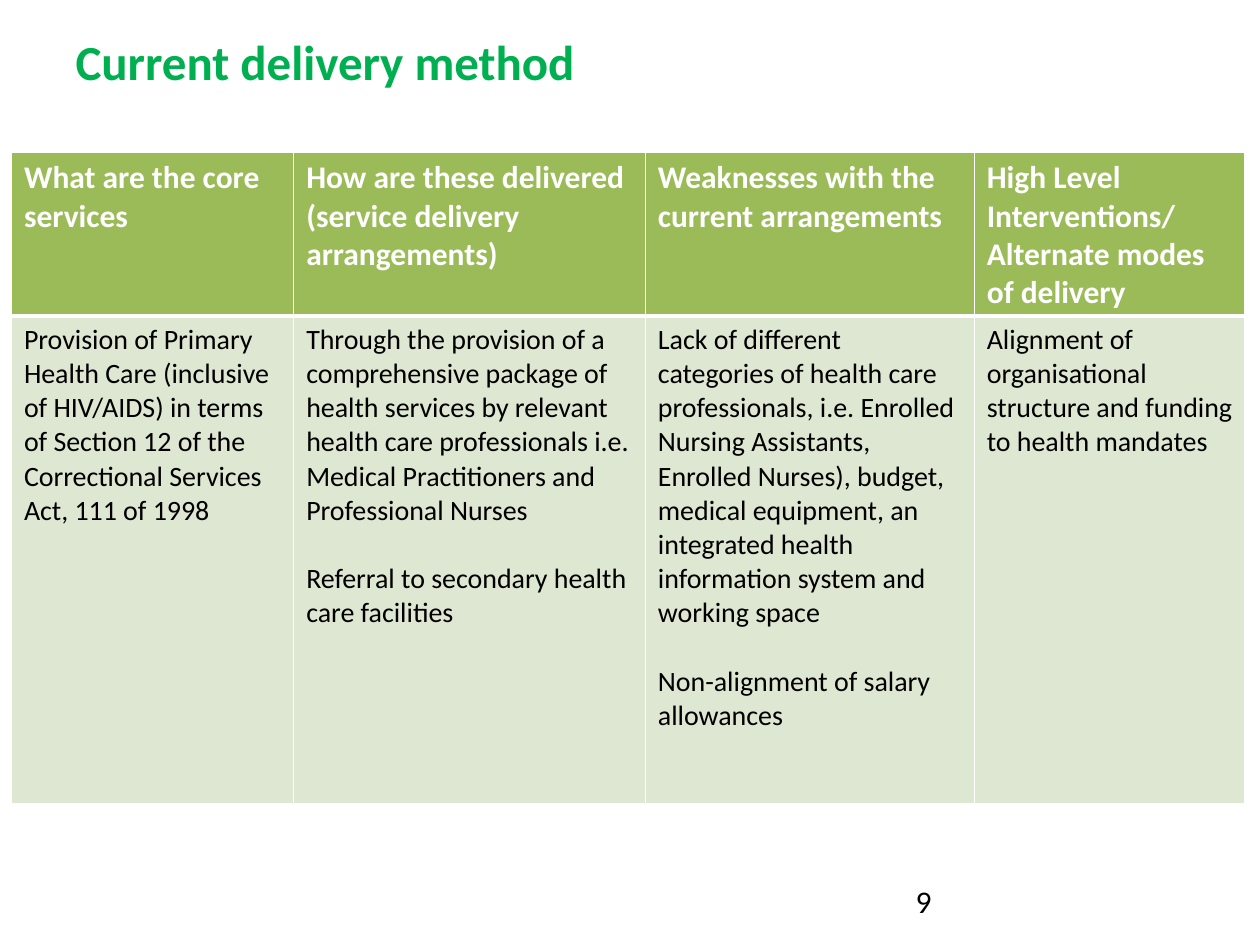
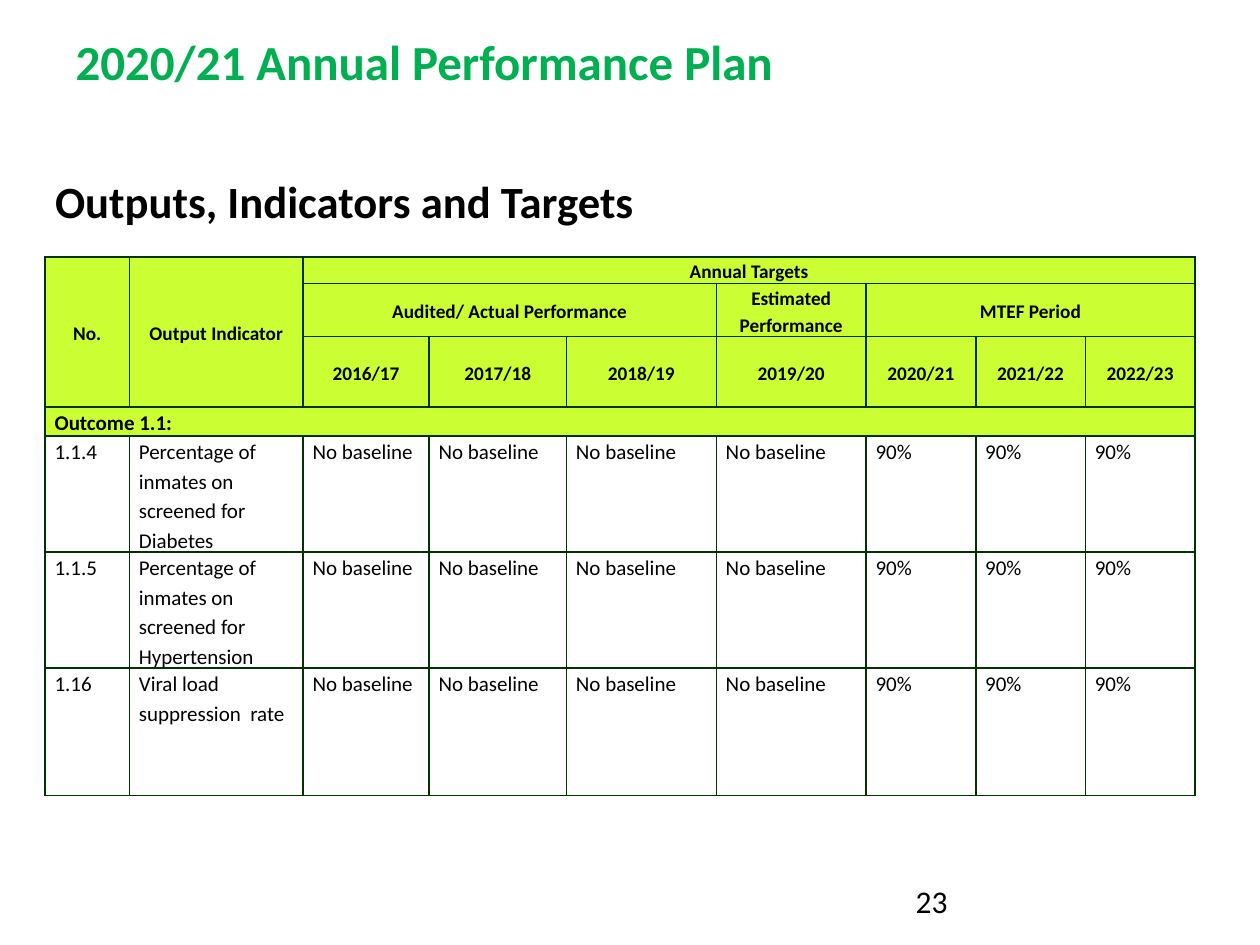
from pptx import Presentation
from pptx.dml.color import RGBColor
from pptx.enum.text import MSO_ANCHOR, MSO_AUTO_SIZE, PP_ALIGN
from pptx.util import Cm, Pt
from lxml.etree import fromstring

FONT = "Calibri"
TITLE_GREEN = RGBColor(0x00, 0xB0, 0x50)
BLACK = RGBColor(0x00, 0x00, 0x00)
WHITE = RGBColor(0xFF, 0xFF, 0xFF)
HEADER_GREEN = RGBColor(0x9B, 0xBB, 0x59)
BODY_GREEN = RGBColor(0xDE, 0xE7, 0xD1)
LIME = RGBColor(0xCC, 0xFF, 0x33)
DARK_GREEN = RGBColor(0x00, 0x33, 0x00)
DRAWING_NS = "http://schemas.openxmlformats.org/drawingml/2006/main"


def add_text(paragraph, text, size, color=BLACK, bold=False):
    run = paragraph.add_run()
    run.text = text
    run.font.name = FONT
    run.font.size = Pt(size)
    run.font.bold = bold
    run.font.color.rgb = color
    return run


def style_cell(cell, fill, line_color, top=1, bottom=1):
    if fill is None:
        cell.fill.background()
    else:
        cell.fill.solid()
        cell.fill.fore_color.rgb = fill
    properties = cell._tc.get_or_add_tcPr()
    for position, (side, width) in enumerate(zip("LRTB", (1, 1, top, bottom))):
        properties.insert(position, fromstring(
            f'<a:ln{side} xmlns:a="{DRAWING_NS}" w="{Pt(width)}">'
            f'<a:solidFill><a:srgbClr val="{line_color}"/></a:solidFill>'
            f'</a:ln{side}>'))


presentation = Presentation()
presentation.slide_width = Cm(25.4)
presentation.slide_height = Cm(19.05)

table_specs = [
    ("Current delivery method", "9", 0.23, 3.07,
     [5.69, 7.09, 6.63, 5.46], [3.15, 9.83]),
    ("2020/21 Annual Performance Plan", "23", 0.91, 5.18,
     [1.7, 3.5, 2.54, 2.77, 3.02, 3.02] + [2.21] * 3,
     [0.48, 0.99, 1.42, 0.53, 2.21, 2.21, 2.57]),
]
slides = []
tables = []
for title_text, page_number, left, top, widths, heights in table_specs:
    slide = presentation.slides.add_slide(presentation.slide_layouts[5])
    slides.append(slide)
    title = slide.shapes.title
    title.left, title.top, title.width, title.height = Cm(1.27), Cm(0.51), Cm(22.86), Cm(1.45)
    title.text_frame.vertical_anchor = MSO_ANCHOR.TOP
    title.text_frame.auto_size = MSO_AUTO_SIZE.SHAPE_TO_FIT_TEXT
    title.text_frame.paragraphs[0].alignment = PP_ALIGN.LEFT
    add_text(title.text_frame.paragraphs[0], title_text, 28, TITLE_GREEN, True)

    table = slide.shapes.add_table(
        len(heights), len(widths), Cm(left), Cm(top),
        Cm(sum(widths)), Cm(sum(heights))).table
    table.first_row = False
    table.horz_banding = False
    for column, width in zip(table.columns, widths):
        column.width = Cm(width)
    for row, height in zip(table.rows, heights):
        row.height = Cm(height)
    tables.append(table)

    number_box = slide.shapes.add_textbox(Cm(18.21), Cm(17.65), Cm(5.92), Cm(1.02))
    number_box.text_frame.word_wrap = True
    add_text(number_box.text_frame.paragraphs[0], page_number, 18)

delivery_table, targets_table = tables

delivery_columns = [
    (["What are the core services"],
     ["Provision of Primary Health Care (inclusive of HIV/AIDS) in terms of Section 12 "
      "of the Correctional Services Act, 111 of 1998"]),
    (["How are these delivered", "(service delivery arrangements)"],
     ["Through the provision of a comprehensive package of health services by relevant "
      "health care professionals i.e. Medical Practitioners and Professional Nurses",
      "Referral to secondary health care facilities"]),
    (["Weaknesses with the current arrangements"],
     ["Lack of different categories of health care professionals, i.e. Enrolled Nursing "
      "Assistants, Enrolled Nurses), budget, medical equipment, an integrated health "
      "information system and working space",
      "Non-alignment of salary allowances"]),
    (["High Level Interventions/ Alternate modes of delivery"],
     ["Alignment of organisational structure and funding to health mandates"]),
]
for column_index, (header_texts, body_texts) in enumerate(delivery_columns):
    header = delivery_table.cell(0, column_index)
    body = delivery_table.cell(1, column_index)
    style_cell(header, HEADER_GREEN, WHITE, bottom=3)
    style_cell(body, BODY_GREEN, WHITE, top=3)
    for cell, texts, size, color, bold, gap in (
            (header, header_texts, 18, WHITE, True, 0),
            (body, body_texts, 16, BLACK, False, 19.5)):
        for index, text in enumerate(texts):
            paragraph = cell.text_frame.paragraphs[0]
            if index:
                paragraph = cell.text_frame.add_paragraph()
                paragraph.space_before = Pt(gap)
            add_text(paragraph, text, size, color, bold)

subtitle = slides[1].shapes.add_textbox(Cm(0.86), Cm(3.38), Cm(12.22), Cm(1.35))
subtitle.text_frame.word_wrap = False
subtitle.text_frame.auto_size = MSO_AUTO_SIZE.SHAPE_TO_FIT_TEXT
subtitle.text_frame.vertical_anchor = MSO_ANCHOR.MIDDLE
add_text(subtitle.text_frame.paragraphs[0], "Outputs, Indicators and Targets", 25.5, bold=True)

HEADER_ROWS = 3
OUTCOME_ROW = 3
target_texts = {
    (0, 0): "No.",
    (0, 1): "Output Indicator",
    (0, 2): "Annual Targets",
    (1, 2): "Audited/ Actual Performance",
    (1, 5): "Estimated Performance",
    (1, 6): "MTEF Period",
    (OUTCOME_ROW, 0): "Outcome 1.1:",
}
for index in range(7):
    target_texts[2, index + 2] = f"{2016 + index}/{17 + index}"
indicators = [
    ("1.1.4", "Percentage of inmates on screened for Diabetes"),
    ("1.1.5", "Percentage of inmates on screened for Hypertension"),
    ("1.16", "Viral load suppression  rate"),
]
for row_index, indicator in enumerate(indicators, OUTCOME_ROW + 1):
    values = [*indicator, *["No baseline"] * 4, *["90%"] * 3]
    for column_index, text in enumerate(values):
        target_texts[row_index, column_index] = text

for first, last in (((0, 0), (2, 0)), ((0, 1), (2, 1)), ((0, 2), (0, 8)),
                    ((1, 2), (1, 4)), ((1, 6), (1, 8)), ((3, 0), (3, 8))):
    targets_table.cell(*first).merge(targets_table.cell(*last))

for row_index in range(len(targets_table.rows)):
    for column_index in range(len(targets_table.columns)):
        cell = targets_table.cell(row_index, column_index)
        in_header = row_index < HEADER_ROWS
        shaded = row_index <= OUTCOME_ROW
        style_cell(cell, LIME if shaded else None, DARK_GREEN)
        cell.margin_left = cell.margin_right = Cm(0.19)
        cell.margin_top = cell.margin_bottom = 0
        if in_header:
            cell.vertical_anchor = MSO_ANCHOR.MIDDLE
        text = target_texts.get((row_index, column_index))
        if text:
            paragraph = cell.text_frame.paragraphs[0]
            paragraph.line_spacing = 1.15
            paragraph.alignment = PP_ALIGN.CENTER if in_header else PP_ALIGN.LEFT
            add_text(paragraph, text, 11 if in_header else 12, bold=shaded)

presentation.save("out.pptx")
